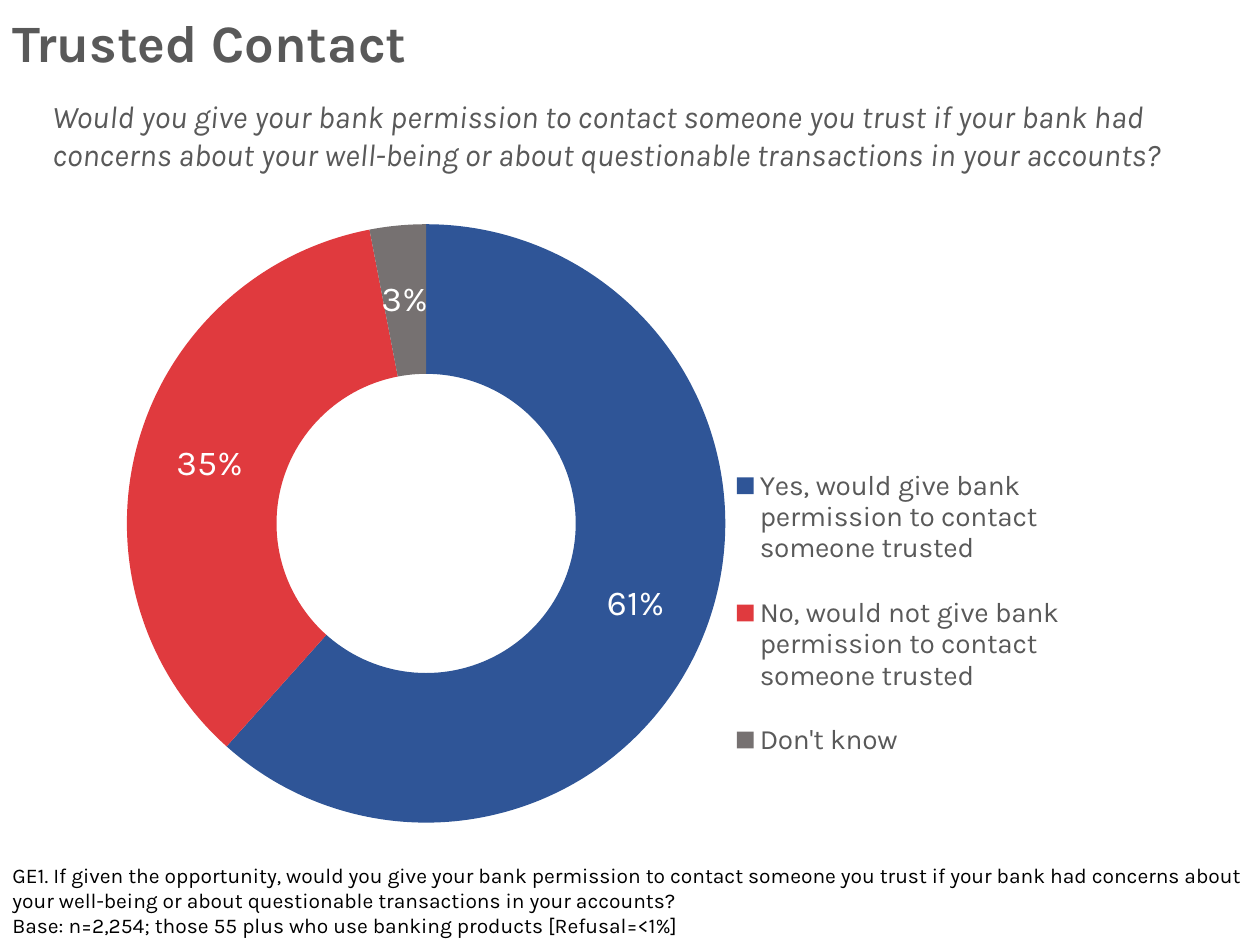
from dataclasses import dataclass

import pptx
import pptx.chart.data
import pptx.dml.color
import pptx.enum.chart
import pptx.enum.text
import pptx.oxml
import pptx.oxml.ns
import pptx.util

PX = 914400 / 126
FONT = "Karla"
COLOURS = {"grey": "595959", "black": "000000", "white": "FFFFFF",
           "yes": "2F5597", "no": "E03A3E", "unknown": "767171"}
QUESTION = ("would you give your bank permission to contact someone you trust "
            "if your bank had concerns about your well-being or about "
            "questionable transactions in your accounts?")


@dataclass
class Answer:
    label: str
    share: float
    colour: str


@dataclass
class TextBlock:
    area: tuple[int, int, int, int]
    paragraphs: list[str]
    size: int
    colour: str
    italic: bool = False


ANSWERS = [
    Answer("Yes, would give bank permission to contact someone trusted", 0.61, "yes"),
    Answer("No, would not give bank permission to contact someone trusted", 0.35, "no"),
    Answer("Don't know", 0.03, "unknown"),
]
BLOCKS = [
    TextBlock((0, 856, 1260, 89),
              ["GE1. If given the opportunity, " + QUESTION,
               "Base: n=2,254; those 55 plus who use banking products [Refusal=<1%]"],
              12, "black"),
    TextBlock((40, 91, 1196, 89), [QUESTION.capitalize()], 18, "grey", italic=True),
]


def emu(*lengths: int) -> list[int]:
    return [round(length * PX) for length in lengths]


def rgb(colour: str) -> pptx.dml.color.RGBColor:
    return pptx.dml.color.RGBColor.from_string(COLOURS[colour])


def style_font(font, size: int, colour: str, bold: bool = False, italic: bool = False) -> None:
    values = {"name": FONT, "size": pptx.util.Pt(size), "bold": bold, "italic": italic}
    for name, value in values.items():
        setattr(font, name, value)
    font.color.rgb = rgb(colour)


def add_title(page, text: str) -> None:
    title = page.shapes.title
    title.left, title.top, title.width, title.height = emu(0, 0, 1260, 91)
    title.text_frame.vertical_anchor = pptx.enum.text.MSO_ANCHOR.MIDDLE
    para = title.text_frame.paragraphs[0]
    para.alignment = pptx.enum.text.PP_ALIGN.LEFT
    para.line_spacing = 0.9
    span = para.add_run()
    span.text = text
    style_font(span.font, 30, "grey", bold=True)


def add_text(page, block: TextBlock) -> None:
    frame = page.shapes.add_textbox(*emu(*block.area)).text_frame
    frame.word_wrap = True
    for index, text in enumerate(block.paragraphs):
        para = frame.add_paragraph() if index else frame.paragraphs[0]
        span = para.add_run()
        span.text = text
        style_font(span.font, block.size, block.colour, italic=block.italic)


def manual_layout(x: float, y: float, w: float, h: float, inner: bool = False):
    """Return a chart layout given in fractions of the chart's size."""
    target = '<c:layoutTarget val="inner"/>' if inner else ""
    modes = '<c:xMode val="edge"/><c:yMode val="edge"/>'
    sizes = "".join(f'<c:{name} val="{value}"/>'
                    for name, value in zip("xywh", (x, y, w, h)))
    return pptx.oxml.parse_xml(
        f'<c:layout {pptx.oxml.ns.nsdecls("c")}><c:manualLayout>'
        f"{target}{modes}{sizes}</c:manualLayout></c:layout>")


def place(element, layout, index: int) -> None:
    for old in element.findall(pptx.oxml.ns.qn("c:layout")):
        element.remove(old)
    element.insert(index, layout)


def add_doughnut(page, answers: list[Answer]) -> None:
    data = pptx.chart.data.CategoryChartData(number_format="0%")
    data.categories = [answer.label for answer in answers]
    data.add_series("Series 1", [answer.share for answer in answers])
    chart = page.shapes.add_chart(pptx.enum.chart.XL_CHART_TYPE.DOUGHNUT,
                                  *emu(87, 183, 983, 688), data).chart
    chart.has_title = False
    style_font(chart.font, 16, "grey")

    chart.has_legend = True
    legend = chart.legend
    legend.position = pptx.enum.chart.XL_LEGEND_POSITION.BOTTOM
    legend.include_in_layout = False
    style_font(legend.font, 16, "grey")
    plot_area = chart.plots[0]._element.getparent()
    place(plot_area, manual_layout(0.04, 0.06, 0.61, 0.87, inner=True), 0)
    place(legend._element, manual_layout(0.65, 0.37, 0.35, 0.51), 1)

    plot = chart.plots[0]
    plot.vary_by_categories = True
    series = plot.series[0]
    for index, answer in enumerate(answers):
        slice_format = series.points[index].format
        slice_format.fill.solid()
        slice_format.fill.fore_color.rgb = rgb(answer.colour)
        slice_format.line.fill.background()
    labels = series.data_labels
    settings = {"show_value": True, "show_percentage": False,
                "number_format": "0%", "number_format_is_linked": False}
    for name, value in settings.items():
        setattr(labels, name, value)
    style_font(labels.font, 20, "white")


def main() -> None:
    deck = pptx.Presentation()
    deck.slide_width, deck.slide_height = emu(1260, 945)
    page = deck.slides.add_slide(deck.slide_layouts[5])
    add_doughnut(page, ANSWERS)
    add_title(page, "Trusted Contact")
    for block in BLOCKS:
        add_text(page, block)
    deck.save("out.pptx")


if __name__ == "__main__":
    main()
